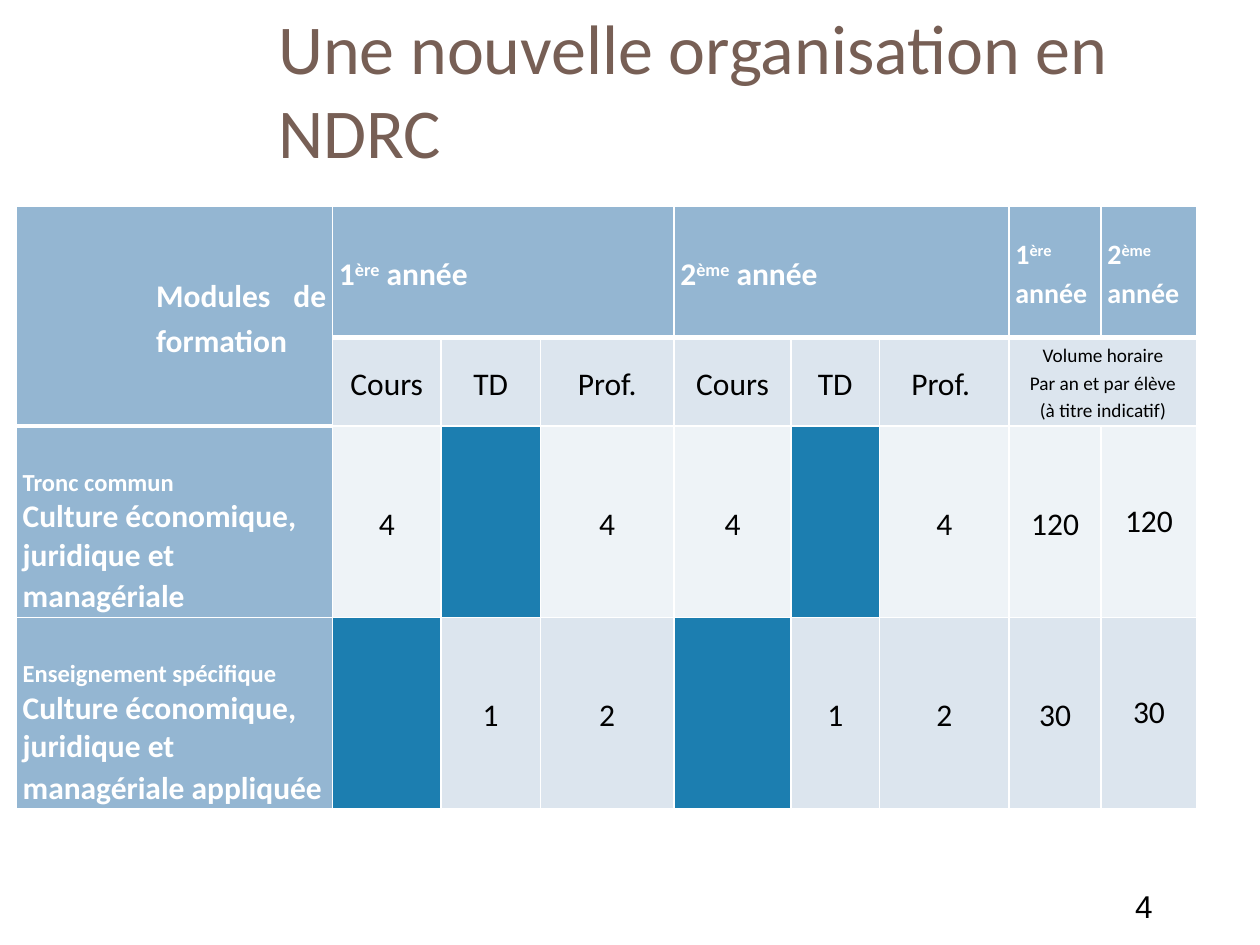
"""Build the NDRC course-hours slide."""
from dataclasses import dataclass

from lxml import etree
from pptx import Presentation
from pptx import util as u
from pptx.dml.color import RGBColor
from pptx.enum import text as tx
from pptx.oxml import ns

WHITE = RGBColor(0xFF, 0xFF, 0xFF)
BLACK = RGBColor(0, 0, 0)
BROWN = RGBColor(0x77, 0x5F, 0x55)
HEAD = RGBColor(0x94, 0xB6, 0xD2)
BAND = RGBColor(0xDC, 0xE5, 0xEE)
PALE = RGBColor(0xEE, 0xF3, 0xF7)
BLUE = RGBColor(0x1C, 0x7E, 0xB0)

LEFT, MID, JUST = tx.PP_ALIGN.LEFT, tx.PP_ALIGN.CENTER, tx.PP_ALIGN.JUSTIFY
COLS = (2.51, 0.86, 0.79, 1.06, 0.93, 0.7, 1.03, 0.73, 0.76)
ROWS = (1.04, 0.7, 1.52, 1.52)


@dataclass(frozen=True)
class Run:
    """A piece of text in one style."""
    text: str
    size: float = 18
    color: RGBColor = BLACK
    bold: bool = False
    base: int = 0
    face: str = "Calibri"


@dataclass(frozen=True)
class Cell:
    """A table cell, its place, span and paragraphs."""
    row: int
    col: int
    fill: RGBColor
    paras: tuple[tuple[Run, ...], ...] = ()
    align: tx.PP_ALIGN = MID
    lead: float = 1.15
    down: int = 1
    wide: int = 1
    indent: float = 0
    top: float = 0
    anchor: tx.MSO_ANCHOR = tx.MSO_ANCHOR.MIDDLE


def add_run(para, item: Run) -> None:
    """Add one styled run to a paragraph."""
    run = para.add_run()
    run.text = item.text
    font = run.font
    font.name, font.size, font.bold = item.face, u.Pt(item.size), item.bold
    font.color.rgb = item.color
    if item.base:
        run._r.get_or_add_rPr().set("baseline", str(item.base * 1000))


def add_box(slide, left: float, top: float, wide: float, high: float,
            item: Run, anchor: tx.MSO_ANCHOR) -> None:
    """Add a text box holding one run."""
    box = slide.shapes.add_textbox(*map(u.Inches, (left, top, wide, high)))
    frame = box.text_frame
    frame.word_wrap, frame.vertical_anchor = True, anchor
    add_run(frame.paragraphs[0], item)


def add_edges(cell, row: int, col: int) -> None:
    """Draw white cell edges, thick below the header."""
    last = 1 if col == 0 else 0
    props = cell._tc.get_or_add_tcPr()
    for side in "LRTB":
        thick = (side == "B" and row == last) or (side == "T" and row == last + 1)
        line = etree.SubElement(props, ns.qn(f"a:ln{side}"),
                                w=str(u.Pt(3 if thick else 1)))
        fill = etree.SubElement(line, ns.qn("a:solidFill"))
        etree.SubElement(fill, ns.qn("a:srgbClr"), val=str(WHITE))


def fill_cell(table, item: Cell) -> None:
    """Merge, colour and write one cell."""
    cell = table.cell(item.row, item.col)
    if item.down * item.wide > 1:
        cell.merge(table.cell(item.row + item.down - 1, item.col + item.wide - 1))
    cell.fill.solid()
    cell.fill.fore_color.rgb = item.fill
    cell.vertical_anchor = item.anchor
    cell.margin_left = cell.margin_right = u.Inches(0.05)
    cell.margin_top, cell.margin_bottom = u.Inches(item.top), 0
    frame = cell.text_frame
    for num, runs in enumerate(item.paras):
        para = frame.add_paragraph() if num else frame.paragraphs[0]
        para.alignment, para.line_spacing = item.align, item.lead
        if item.indent:
            para._p.get_or_add_pPr().set("marL", str(u.Inches(item.indent)))
        for run in runs:
            add_run(para, run)


def year(col: int, num: str, rank: str, size: float, wide: int = 1) -> Cell:
    """Describe a year heading."""
    runs = (Run(num, size, WHITE, True), Run(rank, size, WHITE, True, 30),
            Run(" année", size, WHITE, True))
    return Cell(0, col, HEAD, (runs,), JUST, wide=wide)


def module(row: int, kind: str, name: str) -> Cell:
    """Describe a module label."""
    paras = ((Run(kind, 14, WHITE, True),),
             (Run(name, 18, WHITE, True), Run(" ", 20, WHITE, True)))
    return Cell(row, 0, HEAD, paras, LEFT, 1, top=0.3,
                anchor=tx.MSO_ANCHOR.BOTTOM)


def values(row: int, fill: RGBColor, words: tuple[str, ...]) -> list[Cell]:
    """Describe a row of centred values, blue where empty."""
    return [Cell(row, col, fill if word else BLUE,
                 ((Run(word),),) if word else (),
                 lead=1 if col == 8 else 1.15)
            for col, word in enumerate(words, 1)]


def main() -> None:
    """Build and save the slide."""
    deck = Presentation()
    deck.slide_width, deck.slide_height = u.Inches(10), u.Inches(7.5)
    slide = deck.slides.add_slide(deck.slide_layouts[6])
    add_box(slide, 8.91, 6.99, 0.49, 0.4, Run("4", face="Arial"),
            tx.MSO_ANCHOR.TOP)
    add_box(slide, 2.11, 0.16, 7.54, 1.08,
            Run("Une nouvelle organisation en NDRC", 40, BROWN),
            tx.MSO_ANCHOR.MIDDLE)

    table = slide.shapes.add_table(
        len(ROWS), len(COLS), u.Inches(0.13), u.Inches(1.64),
        u.Inches(sum(COLS)), u.Inches(sum(ROWS))).table
    table.first_row = table.horz_banding = False
    for col, wide in zip(table.columns, COLS):
        col.width = u.Inches(wide)
    for row, high in zip(table.rows, ROWS):
        row.height = u.Inches(high)
    for row in range(len(ROWS)):
        for col in range(len(COLS)):
            add_edges(table.cell(row, col), row, col)

    notes = ("Volume horaire", "Par an et par élève", "(à titre indicatif)")
    cells = [
        Cell(0, 0, HEAD, ((Run("Modules de formation", 18, WHITE, True),),),
             JUST, down=2, indent=1.06),
        year(1, "1", "ère", 18, 3),
        year(4, "2", "ème", 18, 3),
        year(7, "1", "ère", 16),
        year(8, "2", "ème", 16),
        *values(1, BAND, ("Cours", "TD", "Prof.", "Cours", "TD", "Prof. ")),
        Cell(1, 7, BAND, tuple((Run(note, 11),) for note in notes), wide=2),
        module(2, "Tronc commun",
               "Culture économique, juridique et managériale"),
        *values(2, PALE, ("4", "", "4", "4", "", "4", "120", "120")),
        module(3, "Enseignement spécifique",
               "Culture économique, juridique et managériale appliquée"),
        *values(3, BAND, ("", "1", "2", "", "1", "2", "30", "30")),
    ]
    for cell in cells:
        fill_cell(table, cell)
    deck.save("out.pptx")


if __name__ == "__main__":
    main()
